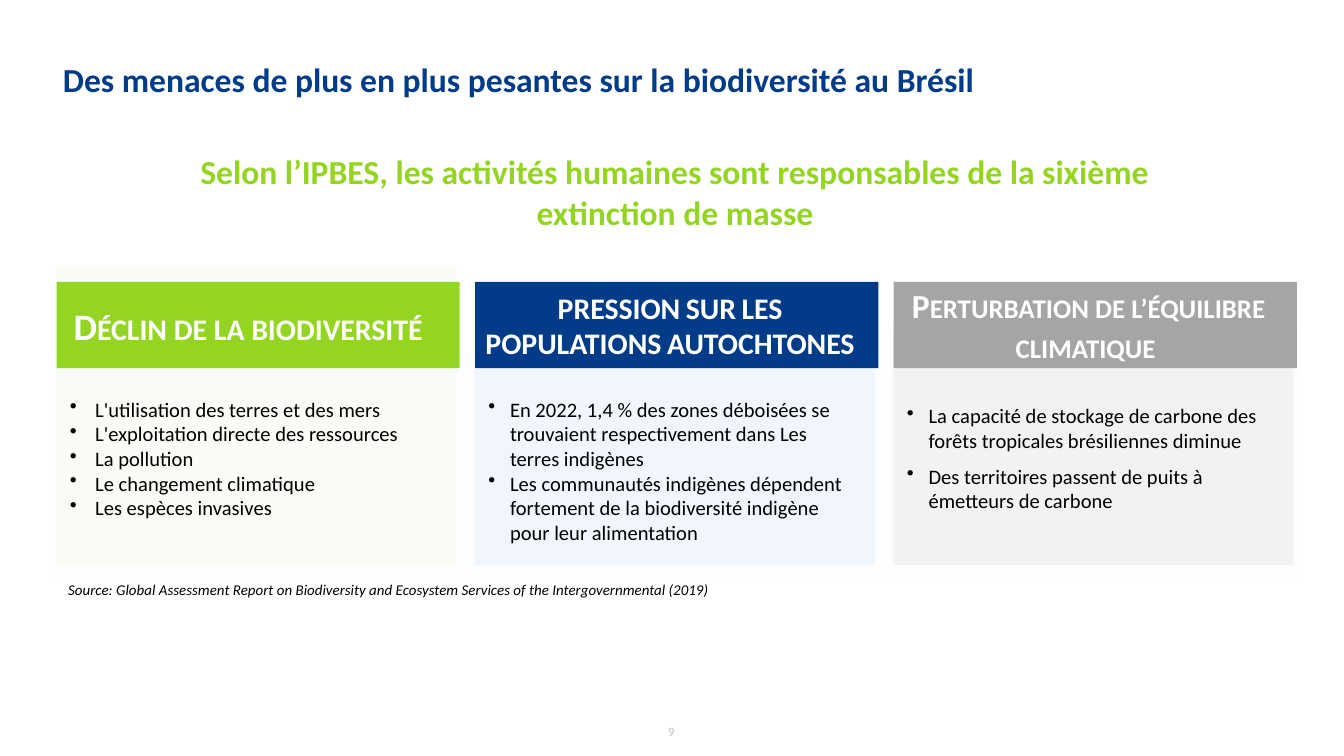
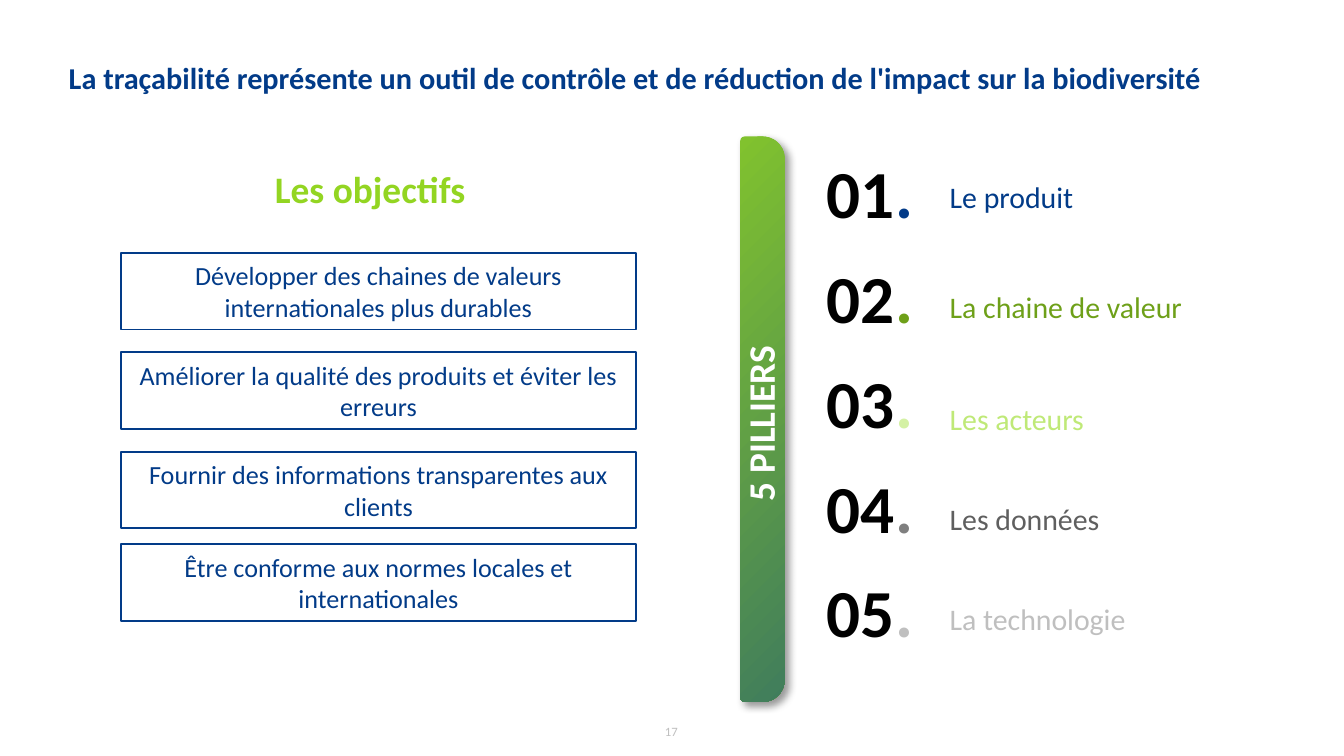
from lxml import etree
from pptx import Presentation
from pptx.dml.color import RGBColor
from pptx.enum.shapes import MSO_SHAPE
from pptx.enum.text import MSO_ANCHOR, PP_ALIGN
from pptx.oxml import parse_xml
from pptx.oxml.ns import qn
from pptx.util import Cm, Pt

NAMESPACE = 'xmlns:a="http://schemas.openxmlformats.org/drawingml/2006/main"'
FONT = "Calibri"
BLUE, GREEN, GREY = "023B88", "93D522", "A5A5A5"
SILVER, BLACK, WHITE = "BFBFBF", "000000", "FFFFFF"
NO_INSETS = (0, 0, 0, 0)
HEAD_INSETS = (0, 0, 0.25, 0)
BOX_INSETS = (0.25, 0.13, 0.25, 0.13)
CARD_SHADOW = ("F2F2F2", 61, 4, 4, 90)
BAR_SHADOW = (BLACK, 40, 4, 3, 45)


def colour(value):
    return RGBColor.from_string(value)


def style(size, text_colour, **more):
    return {"size": Pt(size), "name": FONT, "colour": text_colour, **more}


def add_run(paragraph, text, formats):
    run = paragraph.add_run()
    run.text = text
    for name, value in formats.items():
        if name == "colour":
            run.font.color.rgb = colour(value)
        elif name == "small_caps":
            run._r.get_or_add_rPr().set("cap", "small")
        else:
            setattr(run.font, name, value)


def add_bullet(paragraph, indent):
    properties = paragraph._p.get_or_add_pPr()
    properties.set("marL", str(Cm(indent)))
    properties.set("indent", str(-Cm(indent)))
    etree.SubElement(properties, qn("a:buChar")).set("char", "•")


def write(shape, paragraphs, align=PP_ALIGN.LEFT, anchor=MSO_ANCHOR.TOP,
          insets=BOX_INSETS, wrap=True, after=0, bullet=0):
    """Each paragraph is a list of (text, formats) runs."""
    frame = shape.text_frame
    frame.word_wrap, frame.vertical_anchor = wrap, anchor
    for side, inset in zip(("left", "top", "right", "bottom"), insets):
        setattr(frame, f"margin_{side}", Cm(inset))
    for index, runs in enumerate(paragraphs):
        paragraph = frame.add_paragraph() if index else frame.paragraphs[0]
        paragraph.alignment = align
        paragraph.space_after = Pt(after)
        if bullet:
            add_bullet(paragraph, bullet)
        for text, formats in runs:
            add_run(paragraph, text, formats)


def add_text(slide, box, paragraphs, **layout):
    shape = slide.shapes.add_textbox(*map(Cm, box))
    write(shape, paragraphs, **layout)


def add_box(slide, box, fill=None, alpha=100, line=None, shadow=None,
            kind=MSO_SHAPE.RECTANGLE):
    shape = slide.shapes.add_shape(kind, *map(Cm, box))
    shape.shadow.inherit = False
    if fill:
        shape.fill.solid()
        shape.fill.fore_color.rgb = colour(fill)
        if alpha < 100:
            solid = shape._element.spPr.find(qn("a:solidFill"))
            etree.SubElement(solid[0], qn("a:alpha")).set("val", str(alpha * 1000))
    else:
        shape.fill.background()
    if line:
        shape.line.color.rgb = colour(line)
        shape.line.width = Pt(1)
    else:
        shape.line.fill.background()
    if shadow:
        add_shadow(shape, *shadow)
    return shape


def add_shadow(shape, shade, alpha, blur, distance, angle):
    effects = shape._element.spPr.find(qn("a:effectLst"))
    effects.append(parse_xml(
        f'<a:outerShdw {NAMESPACE} blurRad="{Pt(blur)}" dist="{Pt(distance)}" '
        f'dir="{angle * 60000}" algn="t" rotWithShape="0"><a:srgbClr val="{shade}">'
        f'<a:alpha val="{alpha * 1000}"/></a:srgbClr></a:outerShdw>'))


def set_corner_gradient(shape, inner, outer):
    gradient = parse_xml(
        f'<a:gradFill {NAMESPACE} rotWithShape="1"><a:gsLst>'
        f'<a:gs pos="0"><a:srgbClr val="{inner}"/></a:gs>'
        f'<a:gs pos="100000"><a:srgbClr val="{outer}"/></a:gs></a:gsLst>'
        '<a:path path="circle"><a:fillToRect l="100000" t="100000"/></a:path>'
        '</a:gradFill>')
    properties = shape._element.spPr
    properties.replace(properties.find(qn("a:noFill")), gradient)


def add_page(presentation, title, title_size, title_at, number):
    """Blank slide with the shared title and page number."""
    slide = presentation.slides.add_slide(presentation.slide_layouts[6])
    add_text(slide, (*title_at, 22.81, 0.76),
             [[(title, style(title_size, BLUE, bold=True))]],
             anchor=MSO_ANCHOR.BOTTOM, insets=NO_INSETS)
    add_text(slide, (12.12, 13.54, 1.14, 0.43), [[(number, style(6.8, SILVER))]],
             align=PP_ALIGN.CENTER, anchor=MSO_ANCHOR.BOTTOM, insets=NO_INSETS)
    return slide


def add_heading(slide, box, text, size):
    add_text(slide, box, [[(text, style(size, GREEN, bold=True))]],
             align=PP_ALIGN.CENTER, anchor=MSO_ANCHOR.MIDDLE, after=3.4)


def add_threat(slide, box, threat):
    """Column with a tinted card, a coloured head and a bulleted list."""
    left, top, width, height = box
    bottom = top + height
    card_top = top + threat["card_drop"]
    add_box(slide, (left - 0.01, card_top, width - 0.05, bottom - card_top),
            threat["tint"], threat["alpha"], shadow=CARD_SHADOW)
    head = add_box(slide, (left, top, width, 1.63), threat["fill"])
    write(head, [[(threat["head"], style(threat["size"], WHITE, bold=True,
                                         small_caps=True))]],
          align=PP_ALIGN.CENTER, anchor=MSO_ANCHOR.MIDDLE, insets=HEAD_INSETS)
    body_top = top + threat["body_drop"]
    add_text(slide, (left, body_top, width - 0.07, bottom - body_top - 0.3),
             [[(point, style(11, BLACK))] for point in threat["points"]],
             after=threat["after"], bullet=threat["indent"])


THREATS = [
    {"head": "Déclin de la biodiversité ", "size": 20, "fill": GREEN,
     "tint": "EAF8D2", "alpha": 20, "card_drop": -0.28, "body_drop": 2.04,
     "indent": 0.48, "after": 0,
     "points": ["L'utilisation des terres et des mers",
                "L'exploitation directe des ressources",
                "La pollution", "Le changement climatique",
                "Les espèces invasives"]},
    {"head": "PRESSION SUR LES POPULATIONS AUTOCHTONES", "size": 16, "fill": BLUE,
     "tint": "B6D4FE", "alpha": 17, "card_drop": 1.32, "body_drop": 2.04,
     "indent": 0.41, "after": 0,
     "points": ["En 2022, 1,4 % des zones déboisées se trouvaient "
                "respectivement dans Les terres indigènes",
                "Les communautés indigènes dépendent fortement de la "
                "biodiversité indigène pour leur alimentation"]},
    {"head": "Perturbation de l’équilibre climatique ", "size": 18, "fill": GREY,
     "tint": "D8D8D8", "alpha": 25, "card_drop": 0.84, "body_drop": 2.16,
     "indent": 0.41, "after": 6,
     "points": ["La capacité de stockage de carbone des forêts tropicales "
                "brésiliennes diminue",
                "Des territoires passent de puits à émetteurs de carbone"]},
]

# Text and distance of each box below the first one
OBJECTIVES = [
    ("Développer des chaines de valeurs internationales plus durables", 0),
    ("Améliorer la qualité des produits et éviter les erreurs", 1.88),
    ("Fournir des informations transparentes aux clients", 3.76),
    ("Être conforme aux normes locales et internationales", 5.51),
]

# Label, label colour, dot colour and distance of the label below its number
PILLARS = [
    ("Le produit", BLUE, BLUE, 0.51),
    ("La chaine de valeur", "6EA019", "6EA019", 0.61),
    ("Les acteurs", "BFE977", "D4F1A4", 0.74),
    ("Les données", "5F5F5F", "7F7F7F", 0.66),
    ("La technologie", SILVER, SILVER, 0.56),
]


def build_threats(presentation):
    slide = add_page(presentation,
                     "Des menaces de plus en plus pesantes sur la biodiversité au Brésil",
                     18, (1.19, 1.12), "9")
    add_heading(slide, (2.64, 2.72, 20.24, 1.8),
                "Selon l’IPBES, les activités humaines sont responsables de la "
                "sixième extinction de masse", 18)
    for column, threat in enumerate(THREATS):
        add_threat(slide, (1.07 + 7.91 * column, 5.33, 7.62, 5.35), threat)
    add_text(slide, (1.04, 10.85, 16.41, 0.61),
             [[("Source: Global Assessment Report on Biodiversity and Ecosystem "
                "Services of the Intergovernmental (2019)",
                style(8, BLACK, italic=True))]])


def add_objectives(slide, left, top, width):
    add_heading(slide, (left + 2, top, 5.41, 1.12), "Les objectifs", 20)
    for text, drop in OBJECTIVES:
        shape = add_box(slide, (left, top + 1.78 + drop, width, 1.45), line=BLUE)
        write(shape, [[(text, style(14, BLUE))]], align=PP_ALIGN.CENTER,
              anchor=MSO_ANCHOR.MIDDLE, after=3.4)


def add_pillar_bar(slide, box):
    """Upright bar, laid out lying down and turned about its centre."""
    left, top, width, height = box
    lying = (left + (width - height) / 2, top + (height - width) / 2, height, width)
    bar = add_box(slide, lying, shadow=BAR_SHADOW,
                  kind=MSO_SHAPE.ROUND_2_SAME_RECTANGLE)
    bar.adjustments[0], bar.adjustments[1] = 0.1, 0.5
    bar.rotation = 90
    bar._element.spPr.find(qn("a:xfrm")).set("flipV", "1")
    set_corner_gradient(bar, "407D5C", "81C22E")
    write(bar, [[("5 PILLIERS ", style(20, WHITE, bold=True))]],
          align=PP_ALIGN.CENTER, anchor=MSO_ANCHOR.MIDDLE, insets=(0.1,) * 4)


def add_pillars(slide, left, top, step):
    for index, (label, label_colour, dot_colour, drop) in enumerate(PILLARS):
        row = top + step * index
        add_text(slide, (left, row, 1.65, 1.55),
                 [[(f"{index + 1:02}", style(36, BLACK, bold=True)),
                   (".", style(36, dot_colour, bold=True))]],
                 insets=NO_INSETS, wrap=False)
        add_text(slide, (left + 2.32, row + drop, 5.08, 0.69),
                 [[(label, style(16, label_colour))]], insets=NO_INSETS)


def build_traceability(presentation):
    slide = add_page(presentation,
                     "La traçabilité représente un outil de contrôle et de réduction "
                     "de l'impact sur la biodiversité", 16.2, (1.3, 1.04), "17")
    add_objectives(slide, 2.29, 3, 9.73)
    add_pillar_bar(slide, (13.99, 2.58, 0.84, 10.69))
    add_pillars(slide, 15.63, 2.87, 1.98)


def main():
    presentation = Presentation()
    presentation.slide_width, presentation.slide_height = Cm(25.4), Cm(14.29)
    build_threats(presentation)
    build_traceability(presentation)
    presentation.save("out.pptx")


if __name__ == "__main__":
    main()
